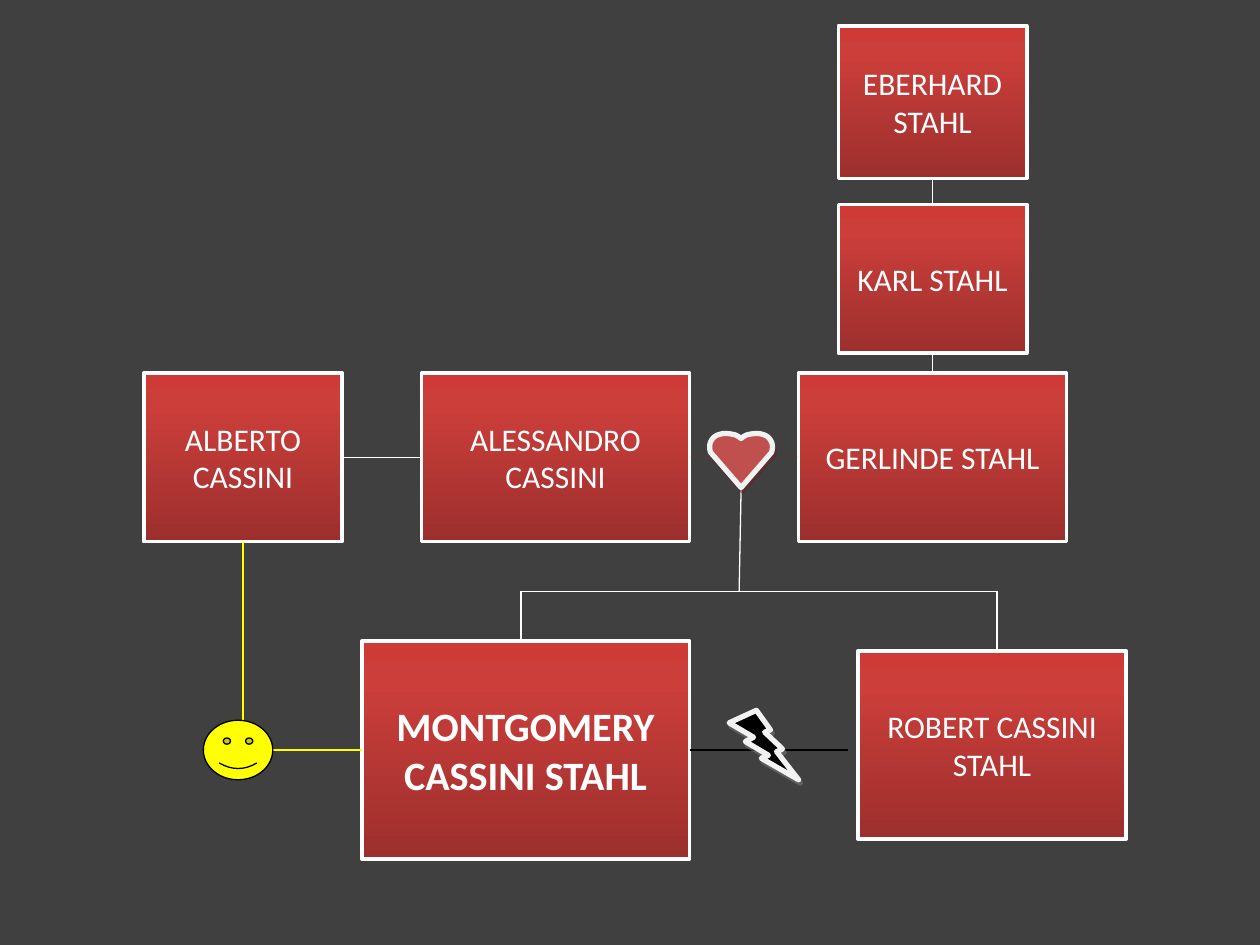
"""Build the Cassini and Stahl family tree slide on a 2 mm grid."""
from dataclasses import dataclass
from typing import Optional

from lxml.etree import SubElement
from pptx import Presentation
from pptx.dml.color import RGBColor
from pptx.enum.shapes import MSO_CONNECTOR as Connector, MSO_SHAPE as Preset
from pptx.enum.text import MSO_ANCHOR as Anchor, PP_ALIGN as Align
from pptx.oxml.ns import qn
from pptx.util import Inches, Pt

COLUMNS, ROWS = 127, 95.25
WIDTH, HEIGHT = Inches(10), Inches(7.5)
COLORS = {
    "background": "404040", "white": "FFFFFF", "red": "FF0000",
    "yellow": "FFFF00", "black": "000000", "heart": "C0504D",
    "outline": "F2F2F2", "heart shadow": "622423", "bolt shadow": "7F7F7F",
}
BOX_STOPS = {0: "9C2F2D", 80: "CB3E3A", 100: "CE3B37"}
TOP, LEFT, BOTTOM, RIGHT = range(4)


@dataclass(frozen=True)
class Person:
    name: str
    column: float
    row: float
    columns: float
    rows: float
    size: float = 18
    bold: bool = False


@dataclass(frozen=True)
class Link:
    start: tuple
    end: tuple
    color: str = "white"
    opacity: Optional[int] = None


@dataclass(frozen=True)
class Symbol:
    preset: Preset
    column: float
    row: float
    columns: float
    rows: float
    fill: str
    line: str
    weight: float
    shadow: Optional[str] = None
    smile: Optional[float] = None


ALBERTO, ALESSANDRO = "ALBERTO CASSINI", "ALESSANDRO CASSINI"
MONTGOMERY, ROBERT = "MONTGOMERY CASSINI STAHL", "ROBERT CASSINI STAHL"
GERLINDE, KARL, EBERHARD = "GERLINDE STAHL", "KARL STAHL", "EBERHARD STAHL"

PEOPLE = [
    Person(ALBERTO, 14.5, 37.6, 20, 17),
    Person(ALESSANDRO, 42.5, 37.6, 27, 17),
    Person(MONTGOMERY, 36.5, 64.6, 33, 22, 23, True),
    Person(ROBERT, 86.5, 65.6, 27, 19),
    Person(GERLINDE, 80.5, 37.6, 27, 17),
    Person(KARL, 84.5, 20.6, 19, 15),
    Person(EBERHARD, 84.5, 2.6, 19, 15.4),
]

HEART_COLUMN, HEART_ROW = 74.7, 43.7
HEART_TIP = (HEART_COLUMN, 49.15)
FORK = (74.5, 59.6)
MONTGOMERY_TURN, ROBERT_TURN = (52.5, 59.6), (100.5, 59.6)

LINKS = [
    Link((ALBERTO, RIGHT), (ALESSANDRO, LEFT)),
    Link((ALESSANDRO, RIGHT), (GERLINDE, LEFT), "red", 10),
    Link((EBERHARD, BOTTOM), (KARL, TOP)),
    Link((KARL, BOTTOM), (GERLINDE, TOP)),
    Link(HEART_TIP, FORK),
    Link(FORK, ROBERT_TURN),
    Link(FORK, MONTGOMERY_TURN),
    Link(MONTGOMERY_TURN, (52.5, 64.6)),
    Link(ROBERT_TURN, (100.5, 65.6)),
    Link((MONTGOMERY, RIGHT), (85.5, 75.6), "black"),
    Link((ALBERTO, BOTTOM), (24.5, 77.6), "yellow"),
    Link((MONTGOMERY, LEFT), (24.5, 75.6), "yellow"),
]

SYMBOLS = [
    Symbol(Preset.LIGHTNING_BOLT, 73.5, 71.6, 7, 7, "black", "outline", 3, "bolt shadow"),
    Symbol(Preset.SMILEY_FACE, 20.5, 72.6, 7, 6, "yellow", "black", 0.75, smile=0.047),
]

HEART_CUSP = (0, 0.5)
HEART_CURVES = [
    ((0.15, 0.38), (0.35, 0.25), (0.55, 0.15)),
    ((0.9, 0.05), (1.25, 0), (1.6, 0)),
    ((1.95, 0), (2.3, 0.1), (2.6, 0.27)),
    ((2.87, 0.47), (3.05, 0.73), (3.12, 1)),
    ((3.2, 1.3), (3.17, 1.6), (3.07, 1.9)),
]


def across(columns: float) -> int:
    return round(WIDTH * columns / COLUMNS)


def down(rows: float) -> int:
    return round(HEIGHT * rows / ROWS)


def rgb(name: str) -> RGBColor:
    return RGBColor.from_string(COLORS[name])


def add_preset(slide, preset: Preset, area):
    shape = slide.shapes.add_shape(
        preset, across(area.column), down(area.row), across(area.columns), down(area.rows))
    shape.shadow.inherit = False
    return shape


def draw_person(slide, person: Person):
    box = add_preset(slide, Preset.RECTANGLE, person)
    box.fill.gradient()
    box.fill.gradient_angle = 90
    stops = box._element.spPr.find(".//" + qn("a:gsLst"))
    for stop in list(stops):
        stops.remove(stop)
    for position, color in BOX_STOPS.items():
        stop = SubElement(stops, qn("a:gs"), pos=str(position * 1000))
        SubElement(stop, qn("a:srgbClr"), val=color)
    box.line.color.rgb, box.line.width = rgb("white"), Pt(2)
    box.text_frame.vertical_anchor = Anchor.MIDDLE
    label = box.text_frame.paragraphs[0]
    label.text, label.alignment = person.name, Align.CENTER
    label.font.name, label.font.size = "Calibri", Pt(person.size)
    label.font.bold, label.font.color.rgb = person.bold, rgb("white")
    return box


def draw_link(slide, link: Link, boxes: dict) -> None:
    start, end = [(0, 0) if point[0] in boxes else point for point in (link.start, link.end)]
    line = slide.shapes.add_connector(
        Connector.STRAIGHT, across(start[0]), down(start[1]), across(end[0]), down(end[1]))
    for (anchor, side), connect in ((link.start, line.begin_connect), (link.end, line.end_connect)):
        if anchor in boxes:
            connect(boxes[anchor], side)
    line.line.color.rgb, line.line.width = rgb(link.color), Pt(0.75)
    properties = line._element.spPr
    if link.opacity is not None:
        color = properties.find(".//" + qn("a:srgbClr"))
        SubElement(color, qn("a:alpha"), val=str(link.opacity * 1000))
    SubElement(properties, qn("a:effectLst"))


def paint(shape, fill: str, line: str, weight: float, shadow: Optional[str]) -> None:
    shape.fill.solid()
    shape.fill.fore_color.rgb = rgb(fill)
    shape.line.color.rgb, shape.line.width = rgb(line), Pt(weight)
    shape.shadow.inherit = False
    if shadow:
        effects = shape._element.spPr.find(qn("a:effectLst"))
        outer = SubElement(effects, qn("a:outerShdw"), blurRad="0", dist=str(Pt(2.2)),
                           dir=str(63 * 60000), algn="ctr", rotWithShape="0")
        color = SubElement(outer, qn("a:srgbClr"), val=COLORS[shadow])
        SubElement(color, qn("a:alpha"), val="50000")


def curve_points(start: tuple, curve: tuple, steps: int = 6) -> list:
    corners = (start, *curve)
    points = []
    for step in range(1, steps + 1):
        t = step / steps
        weights = ((1 - t) ** 3, 3 * t * (1 - t) ** 2, 3 * t * t * (1 - t), t ** 3)
        points.append(tuple(sum(w * c[axis] for w, c in zip(weights, corners)) for axis in (0, 1)))
    return points


def draw_heart(slide) -> None:
    half = [HEART_CUSP]
    for curve in HEART_CURVES:
        half += curve_points(half[-1], curve)
    tip = (0, HEART_TIP[1] - HEART_ROW)
    outline = half + [tip] + [(-x, y) for x, y in reversed(half[1:])]
    spots = [(across(HEART_COLUMN + x), down(HEART_ROW + y)) for x, y in outline]
    builder = slide.shapes.build_freeform(*spots[0])
    builder.add_line_segments(spots[1:], close=True)
    paint(builder.convert_to_shape(), "heart", "outline", 3, "heart shadow")


def draw_symbol(slide, symbol: Symbol) -> None:
    shape = add_preset(slide, symbol.preset, symbol)
    paint(shape, symbol.fill, symbol.line, symbol.weight, symbol.shadow)
    if symbol.smile is not None:
        shape.adjustments[0] = symbol.smile


def main() -> None:
    deck = Presentation()
    deck.slide_width, deck.slide_height = WIDTH, HEIGHT
    slide = deck.slides.add_slide(deck.slide_layouts[6])
    slide.background.fill.solid()
    slide.background.fill.fore_color.rgb = rgb("background")
    boxes = {person.name: draw_person(slide, person) for person in PEOPLE}
    for link in LINKS:
        draw_link(slide, link, boxes)
    draw_heart(slide)
    for symbol in SYMBOLS:
        draw_symbol(slide, symbol)
    deck.save("out.pptx")


if __name__ == "__main__":
    main()
